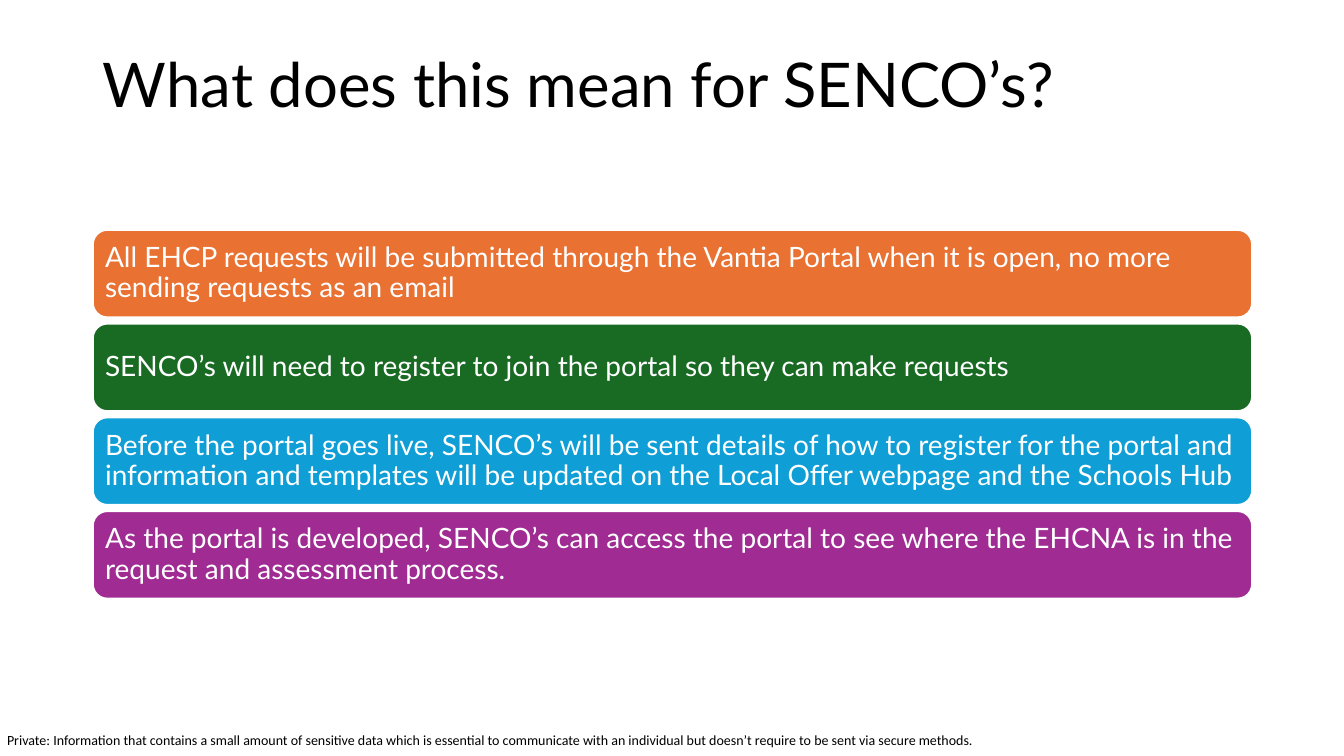
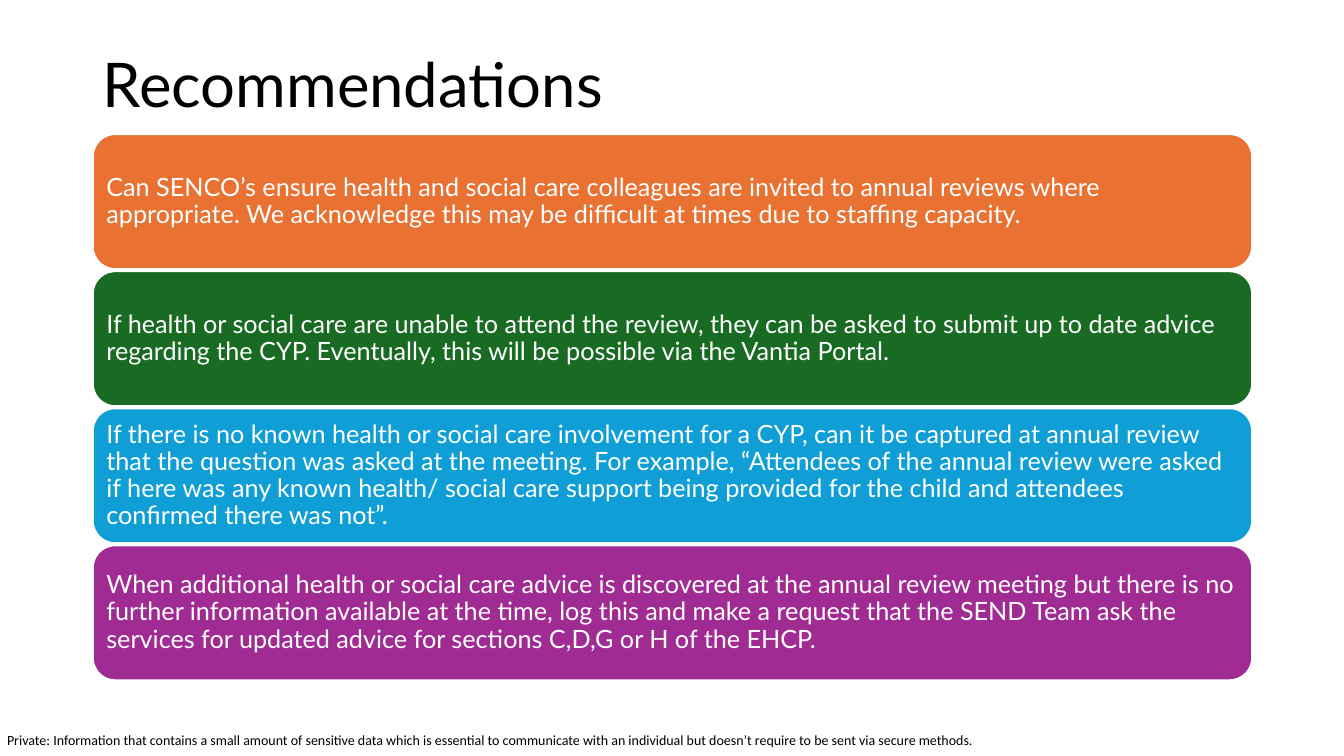
import pptx
import pptx.dml.color
import pptx.enum.shapes
import pptx.enum.text
import pptx.util

Inches = pptx.util.Inches

# Content
FOOTER = (
    "Private: Information that contains a small amount of sensitive data which is essential "
    "to communicate with an individual but doesn’t require to be sent via secure methods."
)
SLIDES = [
    {
        "title": "What does this mean for SENCO’s?",
        "top": 2.28, "height": 0.87, "gap": 0.06, "inset": 0.08, "size": 20,
        "messages": [
            "All EHCP requests will be submitted through the Vantia Portal when it is open, "
            "no more sending requests as an email",
            "SENCO’s will need to register to join the portal so they can make requests",
            "Before the portal goes live, SENCO’s will be sent details of how to register for "
            "the portal and information and templates will be updated on the Local Offer "
            "webpage and the Schools Hub",
            "As the portal is developed, SENCO’s can access the portal to see where the EHCNA "
            "is in the request and assessment process.",
        ],
    },
    {
        "title": "Recommendations",
        "top": 1.33, "height": 1.34, "gap": 0.02, "inset": 0.07, "size": 18,
        "messages": [
            "Can SENCO’s ensure health and social care colleagues are invited to annual reviews "
            "where appropriate. We acknowledge this may be difficult at times due to staffing "
            "capacity.",
            "If health or social care are unable to attend the review, they can be asked to "
            "submit up to date advice regarding the CYP. Eventually, this will be possible via "
            "the Vantia Portal.",
            "If there is no known health or social care involvement for a CYP, can it be "
            "captured at annual review that the question was asked at the meeting. For example, "
            "“Attendees of the annual review were asked if here was any known health/ social "
            "care support being provided for the child and attendees confirmed there was not”.",
            "When additional health or social care advice is discovered at the annual review "
            "meeting but there is no further information available at the time, log this and "
            "make a request that the SEND Team ask the services for updated advice for sections "
            "C,D,G or H of the EHCP.",
        ],
    },
]

# Shared style
BAR_COLOURS = ["E97132", "196B24", "0F9ED5", "A02B93"]
BLACK, WHITE = "000000", "FFFFFF"
LEFT, WIDTH = 0.92, 11.5


def colour(value):
    return pptx.dml.color.RGBColor.from_string(value)


def place(shape, left, top, width, height):
    shape.left, shape.top = Inches(left), Inches(top)
    shape.width, shape.height = Inches(width), Inches(height)


def write(shape, text, size, font_name, font_colour, inset=None, line_spacing=None):
    frame = shape.text_frame
    frame.word_wrap = True
    frame.auto_size = pptx.enum.text.MSO_AUTO_SIZE.NONE
    frame.vertical_anchor = pptx.enum.text.MSO_ANCHOR.MIDDLE
    if inset is not None:
        frame.margin_left = frame.margin_right = Inches(inset)
        frame.margin_top = frame.margin_bottom = Inches(inset)
    paragraph = frame.paragraphs[0]
    paragraph.alignment = pptx.enum.text.PP_ALIGN.LEFT
    paragraph.line_spacing = line_spacing
    run = paragraph.add_run()
    run.text = text
    run.font.size = pptx.util.Pt(size)
    run.font.name = font_name
    run.font.color.rgb = colour(font_colour)


def add_bar(slide, message, fill, top, content):
    bar = slide.shapes.add_shape(
        pptx.enum.shapes.MSO_SHAPE.ROUNDED_RECTANGLE,
        Inches(LEFT), Inches(top), Inches(WIDTH), Inches(content["height"]),
    )
    bar.shadow.inherit = False
    bar.fill.solid()
    bar.fill.fore_color.rgb = colour(fill)
    bar.line.color.rgb = colour(WHITE)
    bar.line.width = pptx.util.Pt(1.5)
    write(bar, message, content["size"], "Lato", WHITE, content["inset"], 0.9)


def add_slide(presentation, content):
    slide = presentation.slides.add_slide(presentation.slide_layouts.get_by_name("Title Only"))

    # Title and footer
    title = slide.shapes.title
    place(title, LEFT, 0.4, WIDTH, 0.94)
    write(title, content["title"], 44, "Lato", BLACK, line_spacing=0.9)
    footer = slide.shapes.add_textbox(Inches(0.07), Inches(7.26), Inches(9.8), Inches(0.17))
    write(footer, FOOTER, 10, "Calibri", BLACK, inset=0)

    # Stack of equal bars
    step = content["height"] + content["gap"]
    for index, (message, fill) in enumerate(zip(content["messages"], BAR_COLOURS)):
        add_bar(slide, message, fill, content["top"] + index * step, content)


def main():
    presentation = pptx.Presentation()
    presentation.slide_width = Inches(13.33)
    presentation.slide_height = Inches(7.5)
    for content in SLIDES:
        add_slide(presentation, content)
    presentation.save("out.pptx")


if __name__ == "__main__":
    main()
